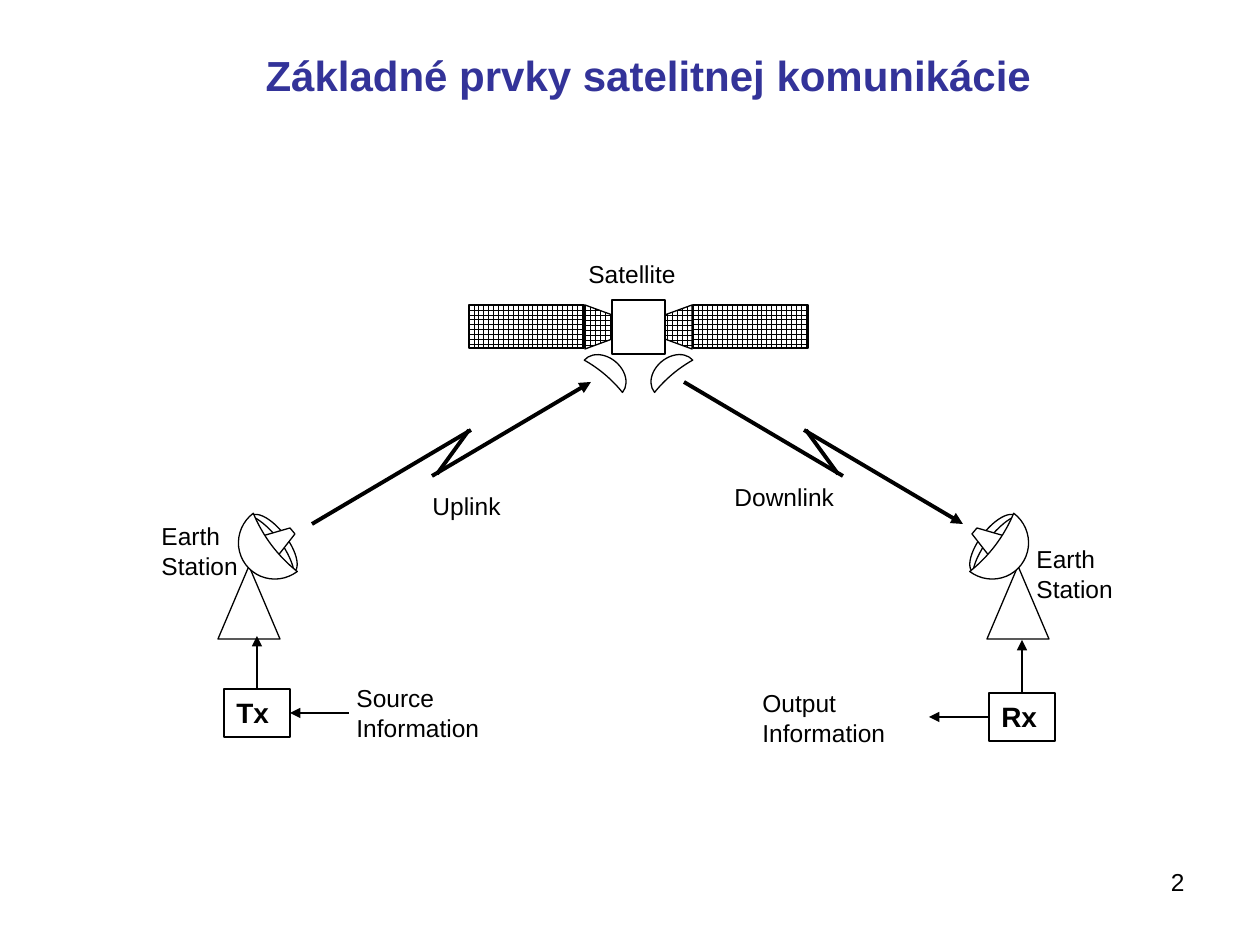
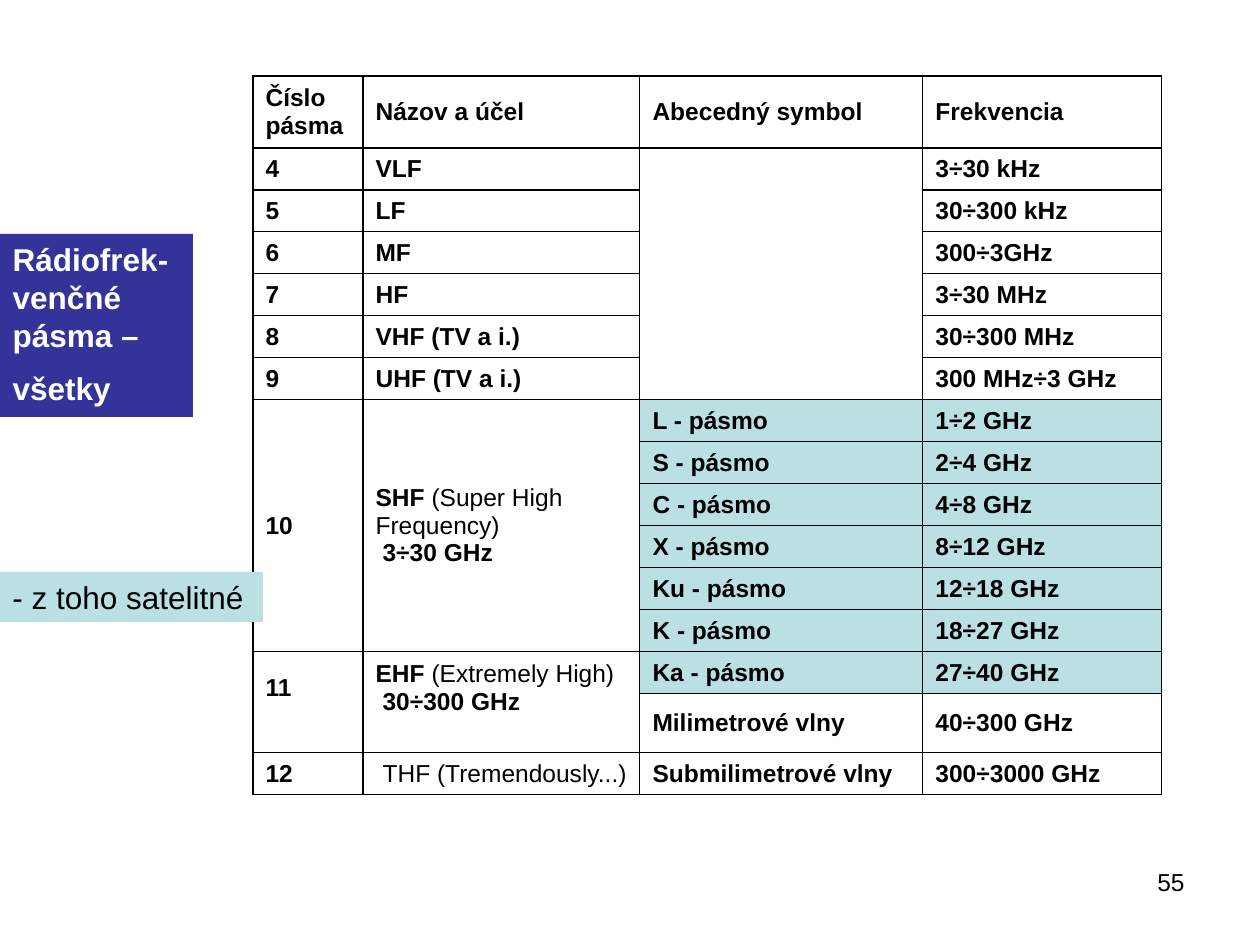
from dataclasses import dataclass

from lxml import etree
from pptx import Presentation
from pptx.dml.color import RGBColor
from pptx.enum.dml import MSO_PATTERN
from pptx.enum.shapes import MSO_CONNECTOR, MSO_SHAPE
from pptx.enum.text import MSO_ANCHOR, MSO_AUTO_SIZE, PP_ALIGN
from pptx.oxml.ns import qn
from pptx.util import Pt

PX = 914400 / 126
RECT, MOON, TRIANGLE = MSO_SHAPE.RECTANGLE, MSO_SHAPE.MOON, MSO_SHAPE.ISOSCELES_TRIANGLE
STRAIGHT = MSO_CONNECTOR.STRAIGHT
GRID = MSO_PATTERN.LARGE_GRID
LEFT, RIGHT = PP_ALIGN.LEFT, PP_ALIGN.RIGHT
TOP_ANCHOR, MIDDLE = MSO_ANCHOR.TOP, MSO_ANCHOR.MIDDLE
TOP_SIDE, LEFT_SIDE, RIGHT_SIDE = 0, 1, 3


@dataclass(frozen=True)
class Theme:
    font: str = "Arial"
    black: RGBColor = RGBColor(0x00, 0x00, 0x00)
    white: RGBColor = RGBColor(0xFF, 0xFF, 0xFF)
    navy: RGBColor = RGBColor(0x33, 0x33, 0x99)
    teal: RGBColor = RGBColor(0xBB, 0xE0, 0xE3)
    title: int = 24
    side: int = 18
    box: int = 16
    body: int = 14
    thin: float = 0.75
    thick: float = 2.25


T = Theme()


def emu(*lengths):
    """Turn px lengths into EMU."""
    return [round(v * PX) for v in lengths]


def write(tf, paragraphs, size=T.body, color=T.black, bold=False, align=LEFT, anchor=TOP_ANCHOR):
    """Fill a text frame; a paragraph is a string or a list of (text, bold) runs."""
    tf.word_wrap = True
    tf.auto_size = MSO_AUTO_SIZE.NONE
    tf.vertical_anchor = anchor
    for i, runs in enumerate(paragraphs):
        p = tf.add_paragraph() if i else tf.paragraphs[0]
        p.alignment = align
        p.space_before = Pt(size / 2 if i else 0)
        for text, is_bold in [(runs, bold)] if isinstance(runs, str) else runs:
            r = p.add_run()
            r.text = text
            r.font.name, r.font.size, r.font.bold = T.font, Pt(size), is_bold
            r.font.color.rgb = color


prs = Presentation()
prs.slide_width, prs.slide_height = emu(1260, 945)
title_only = prs.slide_layouts[5]

# Shared by both slides: placed title and page number
slides = []
for number, place, lines, size, color in [
    ("2", (253, 43, 804, 63), ["Základné prvky satelitnej komunikácie"], T.title, T.navy),
    ("55", (0, 234, 193, 183), ["Rádiofrek-venčné pásma –", "všetky"], T.side, T.white),
]:
    s = prs.slides.add_slide(title_only)
    title = s.shapes.title
    title.left, title.top, title.width, title.height = emu(*place)
    write(title.text_frame, lines, size, color, bold=True)
    write(s.shapes.add_textbox(*emu(903, 861, 294, 66)).text_frame, [number], align=RIGHT)
    slides.append(s)

# Slide 1: satellite link
s = slides[0]
SATELLITE, GROUND, LINKS = 1277, 1267, 1275  # left x + mirrored x

# Each part is drawn on the left and mirrored on the right
parts = [
    (SATELLITE, RECT, (469, 305, 115, 43), 0, None, GRID),
    (SATELLITE, None, [(585, 349), (615, 338), (615, 316), (585, 305)], 0, None, GRID),
    (SATELLITE, MOON, (600, 344, 19, 50), 130.2, 0.875, T.white),
    (GROUND, TRIANGLE, (218, 566, 62, 73), 0, 0.5, None),
    (GROUND, MOON, (271, 504, 15, 71), 142.6, 0.5, T.white),
    (GROUND, None, [(270, 566), (295, 534), (290, 528), (252, 539)], 0, None, T.white),
    (GROUND, MOON, (242, 517, 37, 73), 323, 0.875, T.white),
]
outlined = []
for axis, kind, geometry, rotation, adjustment, fill in parts:
    for mirrored in (False, True):
        if kind is None:
            points = [(axis - x if mirrored else x, y) for x, y in geometry]
            builder = s.shapes.build_freeform(*points[0], scale=PX)
            builder.add_line_segments(points[1:], close=True)
            sp = builder.convert_to_shape()
        else:
            x, y, w, h = geometry
            sp = s.shapes.add_shape(kind, *emu(axis - x - w if mirrored else x, y, w, h))
            if adjustment:
                sp.adjustments[0] = adjustment
            if kind == MOON:
                sp.rotation = (180 - rotation) % 360 if mirrored else rotation
        outlined.append((sp, fill))

outlined.append((s.shapes.add_shape(RECT, *emu(612, 300, 53, 54)), T.white))
radios = {}
for name, x, y in [("Tx", 224, 689), ("Rx", 989, 693)]:
    radios[name] = s.shapes.add_shape(RECT, *emu(x, y, 66, 48))
    write(radios[name].text_frame, [name], T.box, bold=True)
    outlined.append((radios[name], None))

for sp, fill in outlined:
    sp.shadow.inherit = False
    sp.line.color.rgb, sp.line.width = T.black, Pt(T.thin)
    if fill is None:
        sp.fill.background()
    elif fill == GRID:
        sp.fill.patterned()
        sp.fill.pattern = GRID
        sp.fill.fore_color.rgb, sp.fill.back_color.rgb = T.black, T.white
    else:
        sp.fill.solid()
        sp.fill.fore_color.rgb = fill

# Lightning-shaped links; the arrow ends the uplink above and the downlink below
lines = []
for mirrored in (False, True):
    for x1, y1, x2, y2, arrow in [
        (471, 430, 312, 524, mirrored),
        (432, 476, 591, 382, not mirrored),
        (469, 430, 437, 474, False),
    ]:
        if mirrored:
            x1, x2 = LINKS - x1, LINKS - x2
        lines.append((s.shapes.add_connector(STRAIGHT, *emu(x1, y1, x2, y2)), T.thick, arrow))

for name, side, ends, joins_end in [
    ("Tx", TOP_SIDE, (257, 689, 257, 636), False),
    ("Tx", RIGHT_SIDE, (349, 713, 290, 713), True),
    ("Rx", TOP_SIDE, (1022, 693, 1022, 640), False),
    ("Rx", LEFT_SIDE, (989, 717, 929, 717), False),
]:
    line = s.shapes.add_connector(STRAIGHT, *emu(*ends))
    join = line.end_connect if joins_end else line.begin_connect
    join(radios[name], side)
    lines.append((line, T.thin, True))

for line, width, arrow in lines:
    line.line.color.rgb, line.line.width = T.black, Pt(width)
    spPr = line._element.spPr
    if arrow:
        etree.SubElement(spPr.find(qn("a:ln")), qn("a:tailEnd"), type="triangle")
    etree.SubElement(spPr, qn("a:effectLst"))

for text, *place in [
    ("Satellite", 576, 253, 122, 42),
    ("Uplink", 420, 485, 108, 42),
    ("Downlink", 722, 476, 130, 42),
    ("Earth Station", 149, 515, 108, 72),
    ("Earth Station", 1024, 538, 108, 72),
    ("Source Information", 344, 677, 169, 72),
    ("Output Information", 750, 682, 184, 72),
]:
    write(s.shapes.add_textbox(*emu(*place)).text_frame, [text])

# Slide 2: frequency bands
s = slides[1]
title = s.shapes.title
title.fill.solid()
title.fill.fore_color.rgb = T.navy

shf = [[("SHF ", True), ("(Super High Frequency)", False)], "3÷30 GHz"]
ehf = [[("EHF ", True), ("(Extremely High)", False)], "30÷300 GHz"]
thf = [[("THF (Tremendously...)", False)]]
rows = [
    ("Číslo pásma", "Názov a účel", "Abecedný symbol", "Frekvencia"),
    ("4", "VLF", "", "3÷30 kHz"),
    ("5", "LF", "", "30÷300 kHz"),
    ("6", "MF", "", "300÷3GHz"),
    ("7", "HF", "", "3÷30 MHz"),
    ("8", "VHF (TV a i.)", "", "30÷300 MHz"),
    ("9", "UHF (TV a i.)", "", "300 MHz÷3 GHz"),
    ("10", shf, "L - pásmo", "1÷2 GHz"),
    ("", "", "S - pásmo", "2÷4 GHz"),
    ("", "", "C - pásmo", "4÷8 GHz"),
    ("", "", "X - pásmo", "8÷12 GHz"),
    ("", "", "Ku - pásmo", "12÷18 GHz"),
    ("", "", "K - pásmo", "18÷27 GHz"),
    ("11", ehf, "Ka - pásmo", "27÷40 GHz"),
    ("", "", "Milimetrové vlny", "40÷300 GHz"),
    ("12", thf, "Submilimetrové vlny", "300÷3000 GHz"),
]
widths = [110, 277, 283, 239]
heights = [72] + [42] * 13 + [59, 42]
table = s.shapes.add_table(
    len(rows), len(widths), *emu(253, 76, sum(widths), sum(heights))
).table
table.first_row = table.horz_banding = False
for column, width in zip(table.columns, emu(*widths)):
    column.width = width
for row, height in zip(table.rows, emu(*heights)):
    row.height = height

for r, values in enumerate(rows):
    for c, value in enumerate(values):
        cell = table.cell(r, c)
        cell.vertical_anchor = MIDDLE
        tcPr = cell._tc.get_or_add_tcPr()
        for edge in ("a:lnL", "a:lnR", "a:lnT", "a:lnB"):
            ln = etree.SubElement(tcPr, qn(edge), w=str(Pt(T.thin)))
            solid = etree.SubElement(ln, qn("a:solidFill"))
            etree.SubElement(solid, qn("a:srgbClr"), val=str(T.black))
        if c >= 2 and 7 <= r <= 13:
            cell.fill.solid()
            cell.fill.fore_color.rgb = T.teal
        else:
            cell.fill.background()
        if not value:
            continue
        write(cell.text_frame, [value] if isinstance(value, str) else value, bold=True,
              anchor=MIDDLE)
        for p in cell.text_frame.paragraphs:
            p.space_before = Pt(0)
        if value in (shf, ehf, thf):
            p.space_before = Pt(0)
            p._p.get_or_add_pPr().set("marL", str(emu(7)[0]))

for first, last, c in [(1, 6, 2), (7, 12, 0), (7, 12, 1), (13, 14, 0), (13, 14, 1)]:
    table.cell(first, c).merge(table.cell(last, c))
for c in (0, 1):
    table.cell(13, c).margin_bottom = emu(34)[0]

label = s.shapes.add_shape(RECT, *emu(0, 572, 263, 50))
label.shadow.inherit = False
label.fill.solid()
label.fill.fore_color.rgb = T.teal
label.line.fill.background()
write(label.text_frame, ["- z toho satelitné"], T.side)

prs.save("out.pptx")
